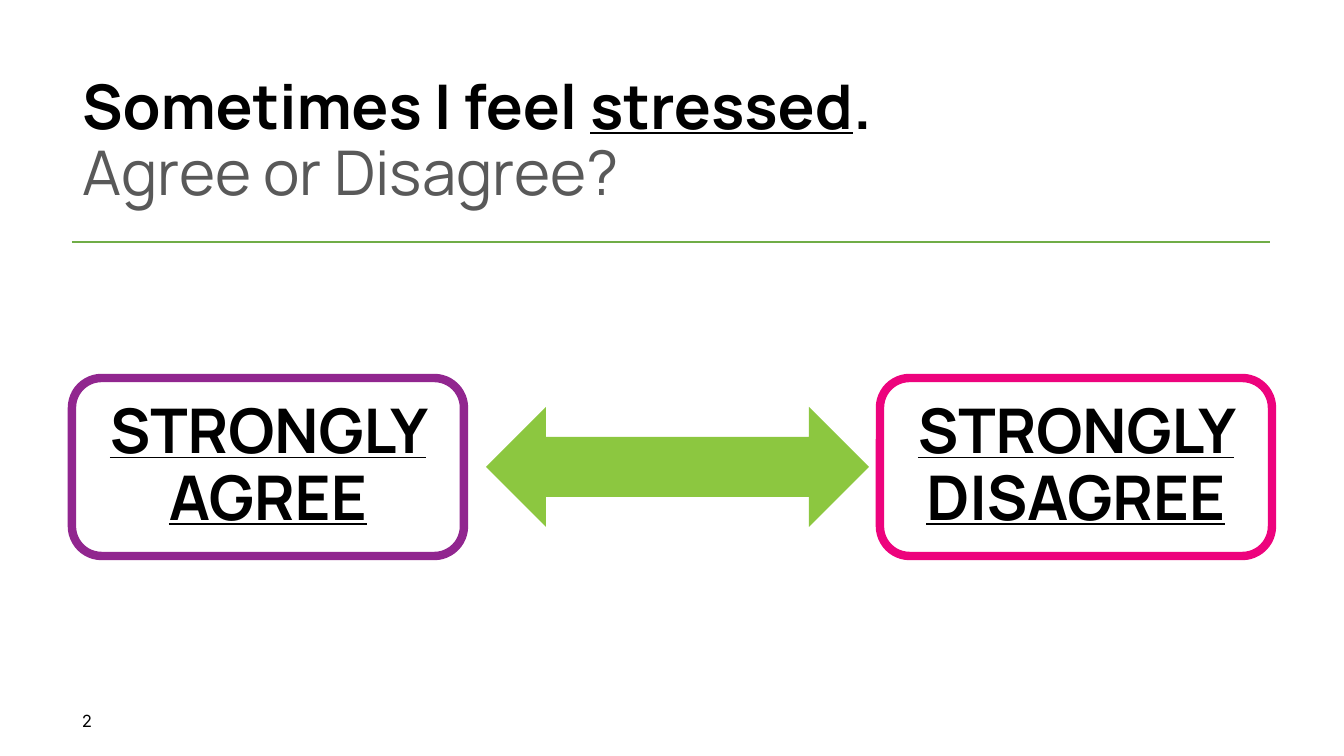
from lxml.etree import SubElement
from pptx import Presentation
from pptx.dml.color import RGBColor
from pptx.enum.shapes import MSO_CONNECTOR, MSO_SHAPE
from pptx.enum.text import MSO_ANCHOR, PP_ALIGN
from pptx.oxml.ns import qn
from pptx.util import Pt

PX = 914400 / 100.8


def px(*sizes):
    """Turn pixel lengths into EMU."""
    return [round(size * PX) for size in sizes]


def style(font, size, color, bold=False, under=False, name="Manrope"):
    font.name, font.size = name, Pt(size)
    font.bold, font.underline = bold, under
    font.color.rgb = RGBColor.from_string(color)


deck = Presentation()
deck.slide_width, deck.slide_height = px(1344, 756)
slide = deck.slides.add_slide(deck.slide_layouts[5])
shapes = slide.shapes

# Title
title = shapes.title
title.left, title.top, title.width, title.height = px(72, 71, 1189, 158)
frame = title.text_frame
frame.word_wrap = True
frame.vertical_anchor = MSO_ANCHOR.TOP
para = frame.paragraphs[0]
para.alignment = PP_ALIGN.LEFT
para.line_spacing = 0.9
for text, color, bold, under in [
    ("Sometimes I feel ", "000000", True, False),
    ("stressed", "000000", True, True),
    (".", "000000", True, False),
    ("Agree or Disagree?", "595959", False, False),
]:
    if not bold:
        para.add_line_break()
    run = para.add_run()
    run.text = text
    style(run.font, 44, color, bold, under)

# Rule under the title
rule = shapes.add_connector(MSO_CONNECTOR.STRAIGHT, *px(72, 242, 1270, 242))
rule.line.color.rgb = RGBColor.from_string("70AD47")
rule.line.width = Pt(1)
SubElement(rule._element.spPr, qn("a:effectLst"))

# Two ends of the scale
for left, text, color in [
    (72, "STRONGLY AGREE", "91268F"),
    (880, "STRONGLY DISAGREE", "ED037D"),
]:
    card = shapes.add_shape(MSO_SHAPE.ROUNDED_RECTANGLE, *px(left, 378, 392, 178))
    card.shadow.inherit = False
    card.fill.solid()
    card.fill.fore_color.rgb = RGBColor.from_string("FFFFFF")
    card.line.color.rgb = RGBColor.from_string(color)
    card.line.width = Pt(6)
    frame = card.text_frame
    frame.text = text
    frame.word_wrap = True
    frame.vertical_anchor = MSO_ANCHOR.MIDDLE
    para = frame.paragraphs[0]
    para.alignment = PP_ALIGN.CENTER
    para.line_spacing = 0.9
    style(para.runs[0].font, 44, "000000", True, True)

arrow = shapes.add_shape(MSO_SHAPE.LEFT_RIGHT_ARROW, *px(486, 407, 383, 120))
arrow.shadow.inherit = False
arrow.fill.solid()
arrow.fill.fore_color.rgb = RGBColor.from_string("8CC740")
arrow.line.fill.background()

# Page number
page = shapes.add_textbox(*px(72, 701, 302, 40))
frame = page.text_frame
frame.text = "2"
frame.word_wrap = True
frame.vertical_anchor = MSO_ANCHOR.MIDDLE
style(frame.paragraphs[0].runs[0].font, 12, "000000", name="Inter")

deck.save("out.pptx")
